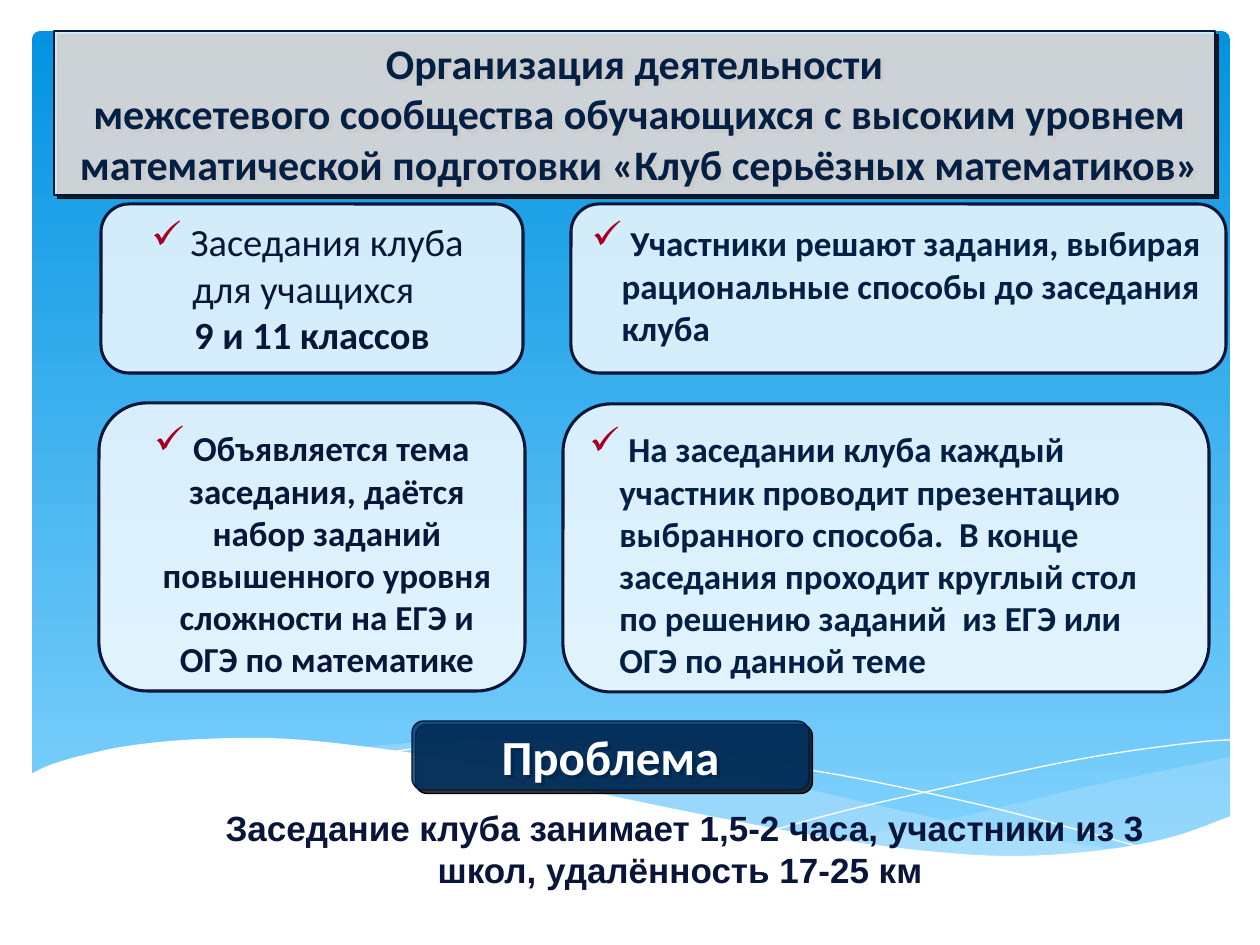
from lxml.etree import SubElement
from pptx import Presentation
from pptx.dml.color import RGBColor
from pptx.enum.shapes import MSO_SHAPE
from pptx.enum.text import MSO_ANCHOR, MSO_AUTO_SIZE, PP_ALIGN
from pptx.oxml.ns import qn
from pptx.util import Emu, Pt

COLORS = {
    "sky_top": "0293E0", "sky_bottom": "83D3FE", "wave": "C6E7FC",
    "white": "FFFFFF", "ink": "091639", "navy": "041F44",
    "button": "003366", "check": "A50021", "shadow": "000000",
}

# Content
TITLE = [
    "Организация деятельности",
    " межсетевого сообщества обучающихся с высоким уровнем",
    " математической подготовки «Клуб серьёзных математиков»",
]
PROBLEM = "Проблема"
PROBLEM_NOTE = ("Заседание клуба занимает 1,5-2 часа, участники из 3 школ, "
                "удалённость 17-25 км ")

# Each card: box in px, text colour, alignment, paragraphs (text, size, bold, checked)
CARDS = [
    ((101, 204, 422, 169), "ink", PP_ALIGN.CENTER, [
        ("Заседания клуба ", 22, False, True),
        ("для учащихся  ", 22, False, False),
        ("9 и 11 классов", 22, True, False)]),
    ((571, 204, 655, 169), "navy", PP_ALIGN.LEFT, [
        ("Участники решают задания, выбирая рациональные способы "
         "до заседания клуба", 20, True, True)]),
    ((99, 403, 426, 288), "ink", PP_ALIGN.CENTER, [
        ("Объявляется тема заседания, даётся набор заданий повышенного уровня "
         "сложности на ЕГЭ и ОГЭ по математике", 20, True, True)]),
    ((563, 404, 646, 288), "navy", PP_ALIGN.LEFT, [
        ("На заседании клуба каждый участник проводит презентацию выбранного "
         "способа.  В конце заседания проходит круглый стол по решению заданий  "
         "из ЕГЭ или ОГЭ по данной теме", 20, True, True)]),
]

# Wave edges: points in px that a smooth curve runs through
RIGHT_TOP = [(1230, 757), (1086, 787), (950, 819), (834, 840)]
RIGHT_BOTTOM = [(834, 840), (924, 852), (1013, 857), (1089, 853), (1143, 845),
                (1198, 830), (1231, 818)]
MIDDLE_TOP = [(1126, 850), (1056, 841), (935, 818), (794, 786), (699, 765),
              (616, 751), (529, 742), (456, 740), (362, 747)]
MIDDLE_BOTTOM = [(362, 747), (457, 761), (567, 786), (714, 819), (820, 839),
                 (911, 852), (1004, 857), (1070, 856), (1126, 850)]
FALLING_LINE = [(391, 752), (445, 745), (507, 742), (568, 742), (644, 748),
                (733, 759), (839, 775), (959, 800), (1048, 822), (1144, 848)]
RISING_LINE = [(774, 830), (848, 810), (944, 788), (1055, 764), (1130, 751),
               (1200, 742), (1230, 740)]
WHITE_TOP = [(29, 775), (50, 765), (84, 755), (134, 745), (203, 739), (290, 739),
             (398, 751), (493, 767), (599, 793), (730, 820), (841, 840),
             (937, 852), (1019, 856), (1103, 850), (1172, 837), (1231, 816)]
WHITE_CORNERS = [(1231, 921), (29, 921)]


def px(value):
    return Emu(round(value * 914400 / 126))


def rgb(name):
    return RGBColor.from_string(COLORS[name])


def paint(shape, fill=None, opacity=100, line=None, width=0.0):
    """Set fill with its opacity, and the outline."""
    if fill:
        shape.fill.solid()
        shape.fill.fore_color.rgb = rgb(fill)
        if opacity < 100:
            color = shape._element.spPr.find(qn("a:solidFill"))[0]
            SubElement(color, qn("a:alpha"), val=str(opacity * 1000))
    else:
        shape.fill.background()
    if line:
        shape.line.color.rgb = rgb(line)
        shape.line.width = Pt(width)
    else:
        shape.line.fill.background()
    shape.shadow.inherit = False


def cast_shadow(shape):
    effects = shape._element.spPr.find(qn("a:effectLst"))
    shadow = SubElement(effects, qn("a:outerShdw"), dist=str(Pt(2.8)),
                        dir="2700000", algn="ctr", rotWithShape="0")
    SubElement(shadow, qn("a:srgbClr"), val=COLORS["shadow"])


def write(frame, text, first=True, size=20, bold=True, color="ink",
          font="Calibri", align=PP_ALIGN.CENTER, checked=False):
    """Write one paragraph, optionally with a check mark bullet."""
    paragraph = frame.paragraphs[0] if first else frame.add_paragraph()
    paragraph.alignment = align
    pieces = [(" ", 22), (text, size)] if checked else [(text, size)]
    for piece, points in pieces:
        run = paragraph.add_run()
        run.text = piece
        run.font.size = Pt(points)
        run.font.bold = bold
        run.font.name = font
        run.font.color.rgb = rgb(color)
    if checked:
        props = paragraph._p.get_or_add_pPr()
        props.set("marL", str(px(30)))
        props.set("indent", str(px(-30)))
        bullet_color = SubElement(props, qn("a:buClr"))
        SubElement(bullet_color, qn("a:srgbClr"), val=COLORS["check"])
        SubElement(props, qn("a:buChar"), char="✓")


def rounded(shapes, box):
    return shapes.add_shape(MSO_SHAPE.ROUNDED_RECTANGLE, *map(px, box))


def smooth(points, steps=6):
    """Catmull-Rom curve through the points."""
    padded = [points[0], *points, points[-1]]
    curve = [points[0]]
    for a, b, c, d in zip(padded, padded[1:], padded[2:], padded[3:]):
        for step in range(1, steps + 1):
            t = step / steps
            curve.append(tuple(
                (2 * q + (r - p) * t + (2 * p - 5 * q + 4 * r - s) * t ** 2
                 + (3 * q - p - 3 * r + s) * t ** 3) / 2
                for p, q, r, s in zip(a, b, c, d)))
    return curve


def wave(shapes, points, **look):
    start, *rest = [(px(x), px(y)) for x, y in points]
    builder = shapes.build_freeform(*start)
    builder.add_line_segments(rest, close="fill" in look)
    paint(builder.convert_to_shape(), **look)


def main():
    deck = Presentation()
    deck.slide_width, deck.slide_height = px(1260), px(945)
    slide = deck.slides.add_slide(deck.slide_layouts[5])
    shapes = slide.shapes

    # Sky and waves
    sky = rounded(shapes, (32, 31, 1198, 832))
    sky.adjustments[0] = 0.01
    paint(sky)
    sky.fill.gradient()
    sky.fill.gradient_angle = 270
    for stop, name in zip(sky.fill.gradient_stops, ("sky_top", "sky_bottom")):
        stop.color.rgb = rgb(name)
        stop.position = 0 if name == "sky_top" else 1
    wave(shapes, smooth(RIGHT_TOP) + smooth(RIGHT_BOTTOM), fill="wave", opacity=29)
    wave(shapes, smooth(MIDDLE_TOP) + smooth(MIDDLE_BOTTOM), fill="wave", opacity=40)
    for line in (FALLING_LINE, RISING_LINE):
        wave(shapes, smooth(line), line="white")
    wave(shapes, smooth(WHITE_TOP) + WHITE_CORNERS, fill="white")

    # Problem button and its note
    button = rounded(shapes, (412, 721, 397, 69))
    paint(button, fill="button", opacity=80, line="ink", width=0.75)
    cast_shadow(button)
    button.text_frame.word_wrap = False
    write(button.text_frame, PROBLEM, size=28, color="white")

    note = shapes.add_textbox(*map(px, (184, 800, 1002, 97))).text_frame
    note.word_wrap = True
    note.auto_size = MSO_AUTO_SIZE.SHAPE_TO_FIT_TEXT
    write(note, PROBLEM_NOTE, font="Arial")

    # Cards
    for box, color, align, paragraphs in CARDS:
        card = rounded(shapes, box)
        paint(card, fill="white", opacity=80, line="ink", width=1.75)
        card.text_frame.word_wrap = True
        card.text_frame.vertical_anchor = MSO_ANCHOR.TOP
        for index, (text, size, bold, checked) in enumerate(paragraphs):
            write(card.text_frame, text, first=index == 0, size=size, bold=bold,
                  color=color, align=align, checked=checked)

    # Title as a rounded panel in front
    title = shapes.title
    title.left, title.top, title.width, title.height = map(px, (54, 31, 1161, 164))
    outline = SubElement(title._element.spPr, qn("a:prstGeom"), prst="roundRect")
    SubElement(outline, qn("a:avLst"))
    paint(title, fill="white", opacity=80, line="ink", width=0.75)
    cast_shadow(title)
    title.text_frame.word_wrap = False
    title.text_frame.auto_size = MSO_AUTO_SIZE.NONE
    title.text_frame.vertical_anchor = MSO_ANCHOR.MIDDLE
    for index, text in enumerate(TITLE):
        write(title.text_frame, text, first=index == 0, size=24, color="navy")
    shapes._spTree.append(title._element)

    deck.save("out.pptx")


if __name__ == "__main__":
    main()
